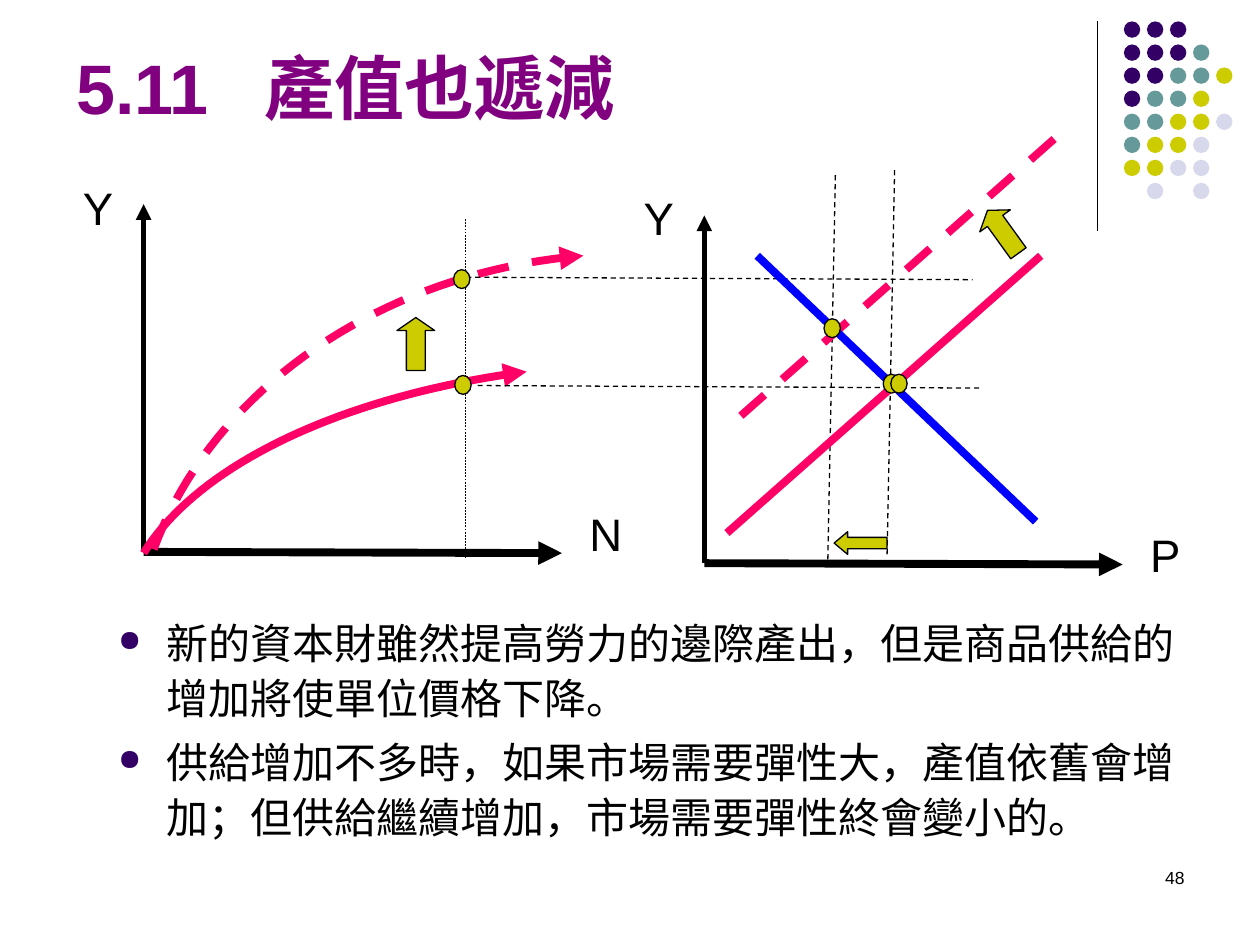
from lxml.etree import SubElement
from pptx import Presentation
from pptx.dml.color import RGBColor
from pptx.enum.dml import MSO_LINE
from pptx.enum.shapes import MSO_CONNECTOR, MSO_SHAPE
from pptx.enum.text import MSO_ANCHOR, PP_ALIGN
from pptx.oxml.ns import qn
from pptx.util import Inches, Pt

COLORS = {"black": "000000", "purple": "800080", "violet": "330066", "teal": "669999",
          "olive": "CCCC00", "pale": "D8D8EC", "pink": "FF0066", "blue": "0000FF"}

TITLE = "5.11\t產值也遞減"
BULLETS = [
    "新的資本財雖然提高勞力的邊際產出，但是商品供給的增加將使單位價格下降。",
    "供給增加不多時，如果市場需要彈性大，產值依舊會增加；但供給繼續增加，市場需要彈性終會變小的。",
]
# Corner dots: one letter per grid cell, a dot stands for no circle
DOT_ROWS = ["vvv..", "vvvt.", "vvtto", "vtto.", "ttoop", "toop.", "oopp.", ".p.p."]
DOT_COLORS = {"v": "violet", "t": "teal", "o": "olive", "p": "pale"}

AXIS_LABELS = [("Y", 0.56, 1.38), ("N", 4.58, 3.97), ("Y", 5.01, 1.46), ("P", 9.03, 4.13)]
ORIGINS = [(1.14, 4.38), (5.59, 4.47)]
AXIS_WIDTH, AXIS_HEIGHT = 3.32, 2.76
# Bezier control points, dashed
OUTPUT_CURVES = [
    ([(1.14, 4.39), (1.58, 3.68), (2.73, 3.14), (4.18, 2.95)], False),
    ([(1.22, 4.36), (1.69, 3.08), (3.04, 2.16), (4.63, 2.03)], True),
]
# Start, end, colour, width, dashed
MARKET_LINES = [
    ((5.77, 4.23), (8.26, 2.03), "pink", 4.5, False),
    ((5.88, 3.30), (8.37, 1.10), "pink", 4.5, True),
    ((6.01, 2.03), (8.22, 4.14), "blue", 4.5, False),
]
GUIDES = [
    ((6.63, 1.39), (6.57, 4.46), "black", 0.75, True),
    ((7.10, 1.35), (7.04, 4.43), "black", 0.75, True),
    ((3.69, 1.74), (3.69, 4.42), "black", 0.25, True),
    ((3.70, 2.20), (7.72, 2.22), "black", 0.75, True),
    ((3.79, 3.06), (7.80, 3.08), "black", 0.75, True),
]
POINTS = [(3.61, 2.98), (3.60, 2.14), (7.01, 2.97), (7.07, 2.97), (6.54, 2.53)]
# Left, top, width, height, rotation, head length
SHIFT_ARROWS = [(6.62, 4.22, 0.42, 0.18, 0, 0.597), (7.75, 1.69, 0.42, 0.30, 54.2, 0.344),
                (3.09, 2.58, 0.42, 0.30, 90, 0.344)]


def color(name):
    return RGBColor.from_string(COLORS[name])


def style_line(line, name, width, dashed=False, arrow=False):
    line.color.rgb = color(name)
    line.width = Pt(width)
    if dashed:
        line.dash_style = MSO_LINE.DASH
    if arrow:
        SubElement(line._get_or_add_ln(), qn("a:tailEnd"), type="triangle")


def add_line(page, start, end, name, width, dashed=False, arrow=False):
    points = [Inches(value) for value in (*start, *end)]
    connector = page.shapes.add_connector(MSO_CONNECTOR.STRAIGHT, *points)
    style_line(connector.line, name, width, dashed, arrow)
    SubElement(connector._element.spPr, qn("a:effectLst"))


def add_shape(page, kind, place, fill, outlined=True):
    shape = page.shapes.add_shape(kind, *map(Inches, place))
    shape.shadow.inherit = False
    shape.fill.solid()
    shape.fill.fore_color.rgb = color(fill)
    if outlined:
        style_line(shape.line, "black", 0.75)
    else:
        shape.line.fill.background()
    return shape


def add_curve(page, controls, dashed, steps=40):
    points = []
    for step in range(steps + 1):
        t = step / steps
        weights = ((1 - t) ** 3, 3 * t * (1 - t) ** 2, 3 * t * t * (1 - t), t ** 3)
        points.append([Inches(sum(w * point[axis] for w, point in zip(weights, controls)))
                       for axis in (0, 1)])
    builder = page.shapes.build_freeform(*points[0])
    builder.add_line_segments(points[1:], close=False)
    curve = builder.convert_to_shape()
    curve.shadow.inherit = False
    curve.fill.background()
    style_line(curve.line, "pink", 4.5, dashed, arrow=True)


def add_bullet(para):
    properties = para._p.get_or_add_pPr()
    properties.set("marL", str(Inches(0.38)))
    properties.set("indent", str(-Inches(0.38)))
    bullet_color = SubElement(properties, qn("a:buClr"))
    SubElement(bullet_color, qn("a:srgbClr"), val=COLORS["violet"])
    SubElement(properties, qn("a:buSzPct"), val="70000")
    SubElement(properties, qn("a:buChar"), char="●")
    para.line_spacing = 1.1
    para.space_before = Pt(4.8)


def add_tab_stop(para):
    stops = SubElement(para._p.get_or_add_pPr(), qn("a:tabLst"))
    SubElement(stops, qn("a:tab"), pos=str(Inches(1.49)), algn="l")


def add_text(page, place, texts, size, name="black", wrap=True, prepare=None):
    box = page.shapes.add_textbox(*map(Inches, place))
    frame = box.text_frame
    frame.word_wrap = wrap
    for index, text in enumerate(texts):
        para = frame.paragraphs[0] if index == 0 else frame.add_paragraph()
        para.text = text
        if prepare:
            prepare(para)
        para.font.name = "Arial"
        para.font.size = Pt(size)
        para.font.color.rgb = color(name)
    return frame


def main():
    deck = Presentation()
    deck.slide_width, deck.slide_height = Inches(10), Inches(7.5)
    page = deck.slides.add_slide(deck.slide_layouts[6])

    # Corner ornament
    add_line(page, (8.71, 0.17), (8.71, 1.83), "black", 0.75)
    pitch = 0.183
    for row, letters in enumerate(DOT_ROWS):
        for column, letter in enumerate(letters):
            if letter in DOT_COLORS:
                place = (8.92 + column * pitch, 0.17 + row * pitch, 0.13, 0.13)
                add_shape(page, MSO_SHAPE.OVAL, place, DOT_COLORS[letter], outlined=False)

    # Title, bullets and page number
    title = add_text(page, (0.51, 0.2, 8.27, 0.87), [TITLE], 40, "purple", prepare=add_tab_stop)
    title.vertical_anchor = MSO_ANCHOR.BOTTOM
    title.paragraphs[0].font.bold = True
    add_text(page, (0.84, 4.81, 8.84, 2.26), BULLETS, 24, prepare=add_bullet)
    number = add_text(page, (7.17, 6.83, 2.33, 0.5), ["48"], 10)
    number.paragraphs[0].alignment = PP_ALIGN.RIGHT

    # Axes and their labels
    for x, y in ORIGINS:
        add_line(page, (x, y), (x + AXIS_WIDTH, y + 0.01), "black", 4.5, arrow=True)
        add_line(page, (x, y), (x, y - AXIS_HEIGHT), "black", 3, arrow=True)
    for label, left, top in AXIS_LABELS:
        add_text(page, (left, top, 0.45, 0.53), [label], 26, wrap=False)

    # Output curves, market lines and guides
    for controls, dashed in OUTPUT_CURVES:
        add_curve(page, controls, dashed)
    for line in GUIDES + MARKET_LINES:
        add_line(page, *line)

    # Equilibrium points and shift arrows
    for left, top in POINTS:
        add_shape(page, MSO_SHAPE.OVAL, (left, top, 0.13, 0.15), "olive")
    for *place, rotation, head in SHIFT_ARROWS:
        arrow = add_shape(page, MSO_SHAPE.LEFT_ARROW, place, "olive")
        arrow.rotation = rotation
        arrow.adjustments[1] = head

    deck.save("out.pptx")


if __name__ == "__main__":
    main()
